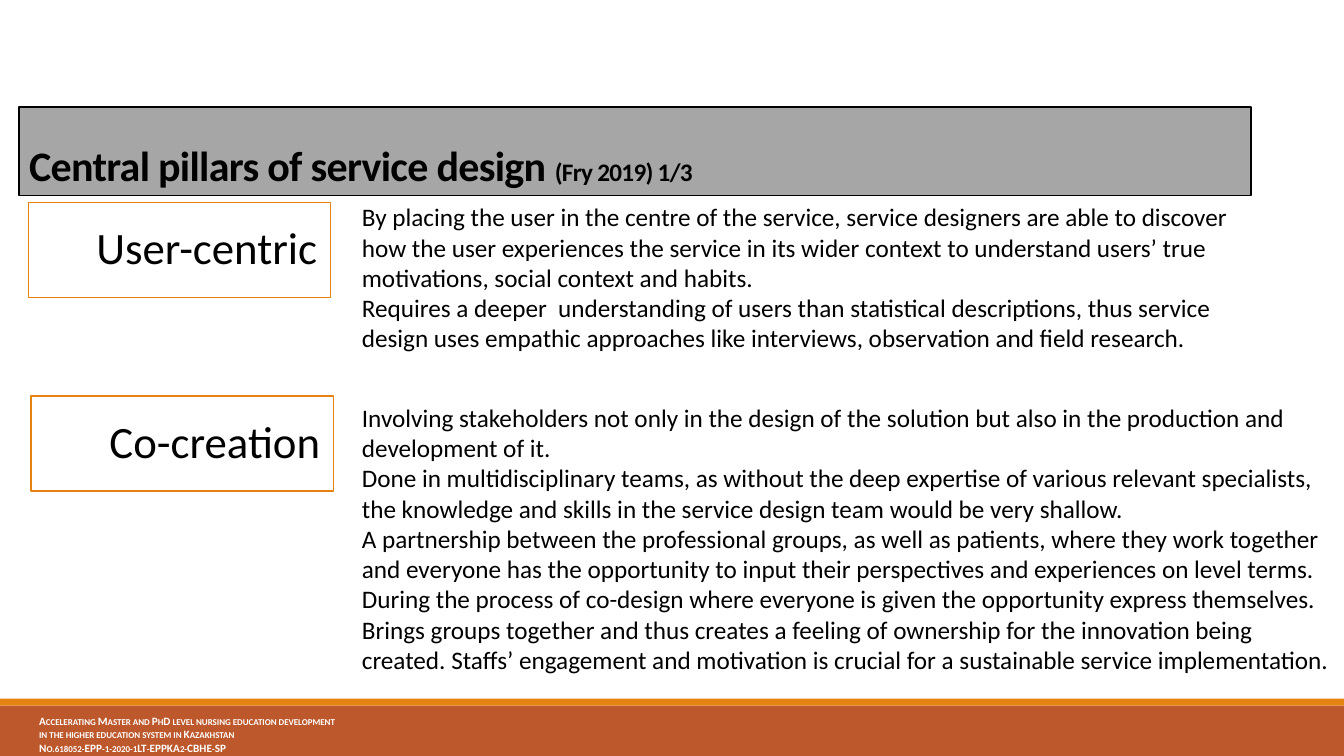
from pptx import Presentation
from pptx.dml.color import RGBColor
from pptx.enum.shapes import MSO_SHAPE as Shape
from pptx.enum.text import MSO_ANCHOR as Anchor, MSO_AUTO_SIZE as AutoSize, PP_ALIGN as Align
from pptx.oxml.xmlchemy import OxmlElement as Element
from pptx.util import Pt

BLACK = RGBColor(0x00, 0x00, 0x00)
WHITE = RGBColor(0xFF, 0xFF, 0xFF)
GREY = RGBColor(0xA6, 0xA6, 0xA6)
ORANGE = RGBColor(0xE4, 0x83, 0x12)
RUST = RGBColor(0xBD, 0x58, 0x2C)

SLIDE_WIDTH, SLIDE_HEIGHT = 960, 540
TITLE_BOX = (13.7, 76.3, 879.8, 63.4)
FOOTER_BOX = (0, 499, SLIDE_WIDTH, 41)

FOOTER_LINES = [
    "Accelerating Master and PhD level nursing education development",
    "in the higher education system in Kazakhstan",
    "No.618052-EPP-1-2020-1LT-EPPKA2-CBHE-SP",
]
PILLARS = [
    ("User-centric", (20.2, 144.7, 216, 67.7), (251.3, 140.4, 654.5, 118), [
        "By placing the user in the centre of the service, service designers are able to discover how the user experiences the service in its wider context to understand users’ true motivations, social context and habits.",
        "Requires a deeper  understanding of users than statistical descriptions, thus service design uses empathic approaches like interviews, observation and field research.",
    ]),
    ("Co-creation", (22.3, 283, 216, 67.7), (251.3, 283.7, 708.5, 203.8), [
        "Involving stakeholders not only in the design of the solution but also in the production and development of it.",
        "Done in multidisciplinary teams, as without the deep expertise of various relevant specialists, the knowledge and skills in the service design team would be very shallow.",
        "A partnership between the professional groups, as well as patients, where they work together and everyone has the opportunity to input their perspectives and experiences on level terms. During the process of co-design where everyone is given the opportunity express themselves.",
        "Brings groups together and thus creates a feeling of ownership for the innovation being created. Staffs’ engagement and motivation is crucial for a sustainable service implementation.",
    ]),
]


def apply(target, **values):
    """Set every given attribute on the target."""
    for name, value in values.items():
        setattr(target, name, value)


def place(part, box):
    """Move a part to a box of left, top, width and height in points."""
    apply(part, **dict(zip(("left", "top", "width", "height"), map(Pt, box))))


def paint(part, fill, line=None):
    """Give a part a solid fill and an optional one-point outline."""
    part.fill.solid()
    part.fill.fore_color.rgb = fill
    if line is None:
        part.line.fill.background()
    else:
        part.line.color.rgb = line
        part.line.width = Pt(1)


def write(paragraph, words, size, color=BLACK, bold=False, **extras):
    """Add a run, with any extra run properties such as caps or spacing."""
    run = paragraph.add_run()
    run.text = words
    apply(run.font, name="Calibri", size=Pt(size), bold=bold)
    run.font.color.rgb = color
    for name, value in extras.items():
        run.font._element.set(name, value)


def write_lines(frame, lines, size, **style):
    """Write plain left-aligned lines without bullets or gaps."""
    for number, line in enumerate(lines):
        paragraph = frame.add_paragraph() if number else frame.paragraphs[0]
        apply(paragraph, alignment=Align.LEFT, space_before=Pt(0), line_spacing=1.0)
        properties = paragraph._p.get_or_add_pPr()
        properties.set("marL", "0")
        properties.set("indent", "0")
        properties.append(Element("a:buNone"))
        write(paragraph, line, size, **style)


def add_band(slide, box, fill):
    """Draw a plain coloured rectangle and return it."""
    band = slide.shapes.add_shape(Shape.RECTANGLE, *map(Pt, box))
    band.shadow.inherit = False
    paint(band, fill)
    return band


def add_footer(slide, box):
    """Draw the two-tone footer with the project details."""
    left, top, width, height = box
    stripe = 5
    add_band(slide, (left, top + stripe, width, height - stripe), RUST)
    add_band(slide, (left, top, width, stripe), ORANGE)
    project = slide.shapes.add_textbox(*map(Pt, (left + 20.9, top + 7.6, 330, 36)))
    project.text_frame.word_wrap = True
    write_lines(project.text_frame, FOOTER_LINES, 8, color=WHITE, bold=True, cap="small")


def add_title(title, box):
    """Format the title bar and its citation."""
    place(title, box)
    paint(title, GREY, BLACK)
    apply(title.text_frame, vertical_anchor=Anchor.BOTTOM, auto_size=AutoSize.NONE, word_wrap=True)
    heading = title.text_frame.paragraphs[0]
    apply(heading, alignment=Align.LEFT, line_spacing=0.85)
    write(heading, "Central pillars of service design ", 30, bold=True, spc="-50")
    write(heading, "(Fry 2019) 1/3", 18, bold=True, spc="-50")


def add_pillar(slide, body, name, name_box, body_box, points):
    """Draw a pillar's outlined name and fill in its description."""
    label = add_band(slide, name_box, WHITE)
    paint(label, WHITE, ORANGE)
    apply(label.text_frame, word_wrap=True, vertical_anchor=Anchor.MIDDLE,
          margin_left=Pt(45.4), margin_right=Pt(9.4), margin_top=Pt(9.4), margin_bottom=Pt(9.4))
    caption = label.text_frame.paragraphs[0]
    apply(caption, alignment=Align.RIGHT, line_spacing=0.9)
    write(caption, name, 32)
    place(body, body_box)
    apply(body.text_frame, word_wrap=True, auto_size=AutoSize.NONE, vertical_anchor=Anchor.TOP)
    write_lines(body.text_frame, points, 18)


def main():
    """Build and save the slide."""
    deck = Presentation()
    apply(deck, slide_width=Pt(SLIDE_WIDTH), slide_height=Pt(SLIDE_HEIGHT))
    slide = deck.slides.add_slide(deck.slide_layouts.get_by_name("Two Content"))
    title, *bodies = slide.placeholders
    add_footer(slide, FOOTER_BOX)
    add_title(title, TITLE_BOX)
    for body, pillar in zip(bodies, PILLARS):
        add_pillar(slide, body, *pillar)
    deck.save("out.pptx")


if __name__ == "__main__":
    main()
